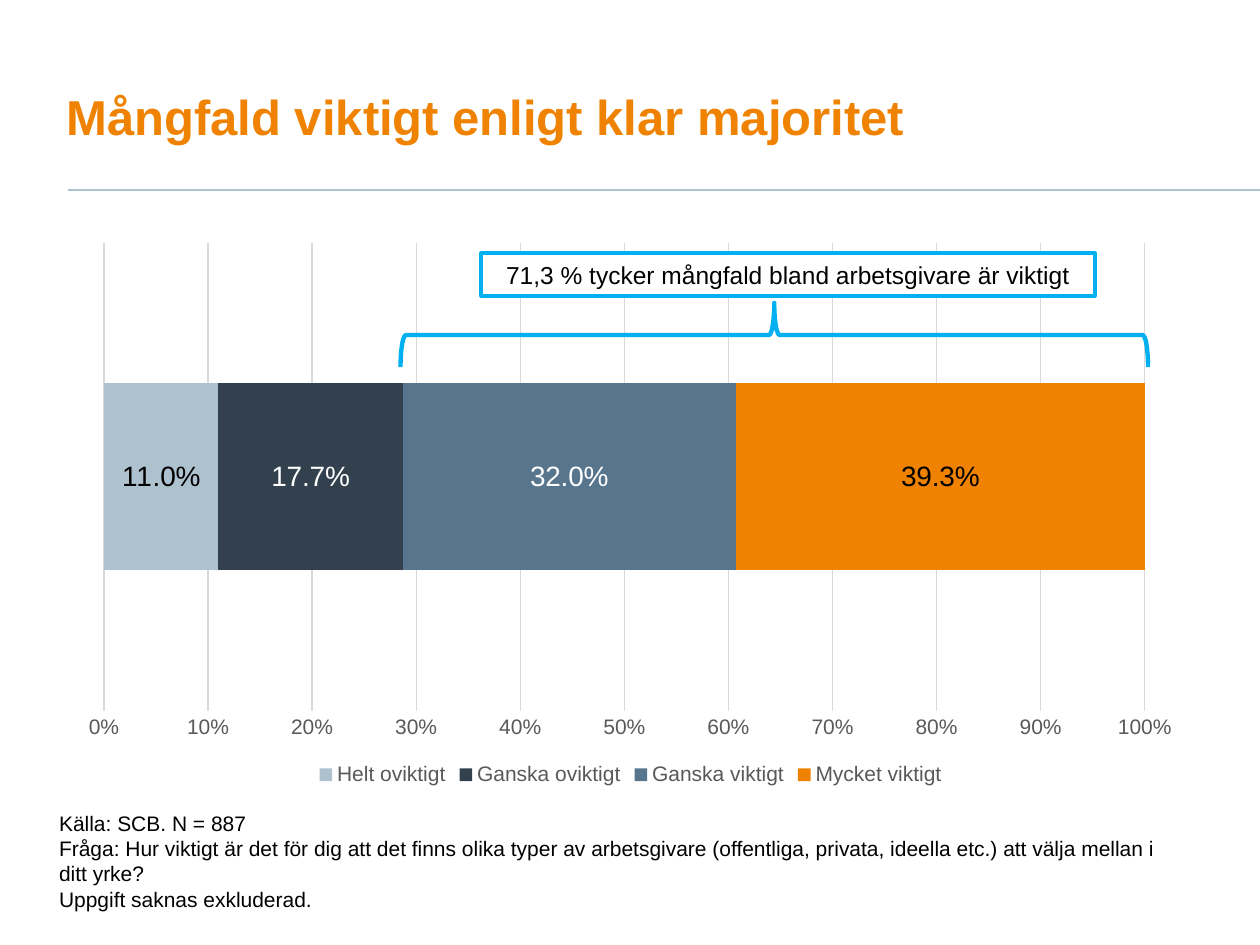
import pptx
import pptx.util
import pptx.chart.data
import pptx.dml.color
import pptx.enum.chart
import pptx.enum.shapes
import pptx.enum.text
import pptx.oxml
import pptx.oxml.ns

Pt = pptx.util.Pt
COLORS = {
    "orange": "EF8200", "pale": "AEC1CF", "dark": "33414E", "steel": "57758D",
    "accent": "00B0F0", "grid": "D9D9D9", "muted": "595959",
    "black": "000000", "white": "FFFFFF",
}

deck = pptx.Presentation()
deck.slide_width = pptx.util.Inches(10)
deck.slide_height = pptx.util.Inches(7.5)
slide = deck.slides.add_slide(deck.slide_layouts[6])


def area(left, top, width, height):
    return [int(share * side) for share, side in zip(
        (left, top, width, height), (deck.slide_width, deck.slide_height) * 2)]


def style(font, size, color, bold=False):
    font.name = "Arial"
    font.size = Pt(size)
    font.bold = bold
    font.color.rgb = pptx.dml.color.RGBColor.from_string(COLORS[color])


x, y, right, _ = area(0.054, 0.201, 1, 0)
rule = slide.shapes.add_connector(pptx.enum.shapes.MSO_CONNECTOR.STRAIGHT, x, y, right, y)
rule.line.color.rgb = pptx.dml.color.RGBColor.from_string(COLORS["pale"])
rule.line.width = Pt(1)
rule._element.spPr.append(pptx.oxml.parse_xml(
    f'<a:effectLst {pptx.oxml.ns.nsdecls("a")}/>'))

title = slide.shapes.add_textbox(*area(0.053, 0.041, 0.716, 0.12)).text_frame
title.word_wrap = True
title.vertical_anchor = pptx.enum.text.MSO_ANCHOR.BOTTOM
title.margin_left = title.margin_top = 0
title.text = "Mångfald viktigt enligt klar majoritet"
title.paragraphs[0].line_spacing = 0.9
style(title.paragraphs[0].runs[0].font, 28, "orange", True)

answers = [
    ("Helt oviktigt", 0.11, "pale", "black"),
    ("Ganska oviktigt", 0.177, "dark", "white"),
    ("Ganska viktigt", 0.32, "steel", "white"),
    ("Mycket viktigt", 0.393, "orange", "black"),
]
survey = pptx.chart.data.CategoryChartData(number_format="###0.0%")
survey.categories = ["1"]
for answer, share, _, _ in answers:
    survey.add_series(answer, [share])
chart = slide.shapes.add_chart(
    pptx.enum.chart.XL_CHART_TYPE.BAR_STACKED_100,
    *area(0.053, 0.245, 0.895, 0.592), survey).chart
style(chart.font, 10, "black")
chart.has_title = False
chart.has_legend = True
chart.legend.position = pptx.enum.chart.XL_LEGEND_POSITION.BOTTOM
chart.legend.include_in_layout = False
style(chart.legend.font, 12, "muted")

chart.category_axis.visible = False
percent = chart.value_axis
percent.minimum_scale, percent.maximum_scale, percent.major_unit = 0, 1, 0.1
percent.major_tick_mark = pptx.enum.chart.XL_TICK_MARK.NONE
percent.format.line.fill.background()
percent.major_gridlines.format.line.color.rgb = pptx.dml.color.RGBColor.from_string(COLORS["grid"])
percent.major_gridlines.format.line.width = Pt(0.75)
percent.tick_labels.number_format = "0%"
percent.tick_labels.number_format_is_linked = False
style(percent.tick_labels.font, 12, "muted")

bars = chart.plots[0]
bars.gap_width = 150
bars.overlap = 100
bars.vary_by_categories = False
for series, (_, _, fill, ink) in zip(bars.series, answers):
    series.format.fill.solid()
    series.format.fill.fore_color.rgb = pptx.dml.color.RGBColor.from_string(COLORS[fill])
    labels = series.data_labels
    labels.show_value = True
    labels.number_format = "###0.0%"
    labels.number_format_is_linked = False
    style(labels.font, 16, ink)

plot_area = chart._chartSpace.chart.plotArea
for old_layout in plot_area.findall(pptx.oxml.ns.qn("c:layout")):
    plot_area.remove(old_layout)
plot_area.insert(0, pptx.oxml.parse_xml(
    f'<c:layout {pptx.oxml.ns.nsdecls("c")}><c:manualLayout>'
    '<c:layoutTarget val="inner"/><c:xMode val="edge"/><c:yMode val="edge"/>'
    '<c:x val="0.033"/><c:y val="0.02"/><c:w val="0.923"/><c:h val="0.837"/>'
    '</c:manualLayout></c:layout>'))

brace = slide.shapes.add_shape(
    pptx.enum.shapes.MSO_SHAPE.RIGHT_BRACE, *area(0.589, -0.041, 0.051, 0.791))
brace.rotation = 270
brace.fill.background()
callout = slide.shapes.add_shape(
    pptx.enum.shapes.MSO_SHAPE.RECTANGLE, *area(0.382, 0.268, 0.487, 0.045))
callout.fill.solid()
callout.fill.fore_color.rgb = pptx.dml.color.RGBColor.from_string(COLORS["white"])
for marker, weight in ((brace, 2.5), (callout, 2.25)):
    marker.shadow.inherit = False
    marker.line.color.rgb = pptx.dml.color.RGBColor.from_string(COLORS["accent"])
    marker.line.width = Pt(weight)
callout.text_frame.word_wrap = True
callout.text_frame.text = "71,3 % tycker mångfald bland arbetsgivare är viktigt"
callout.text_frame.paragraphs[0].alignment = pptx.enum.text.PP_ALIGN.CENTER
style(callout.text_frame.paragraphs[0].runs[0].font, 14, "black")

source = slide.shapes.add_textbox(*area(0.037, 0.851, 0.911, 0.121)).text_frame
source.word_wrap = True
source.text = "\n".join([
    "Källa: SCB. N = 887",
    "Fråga: Hur viktigt är det för dig att det finns olika typer av arbetsgivare "
    "(offentliga, privata, ideella etc.) att välja mellan i ditt yrke?",
    "Uppgift saknas exkluderad.",
])
for paragraph in source.paragraphs:
    style(paragraph.runs[0].font, 12, "black")

deck.save("out.pptx")
